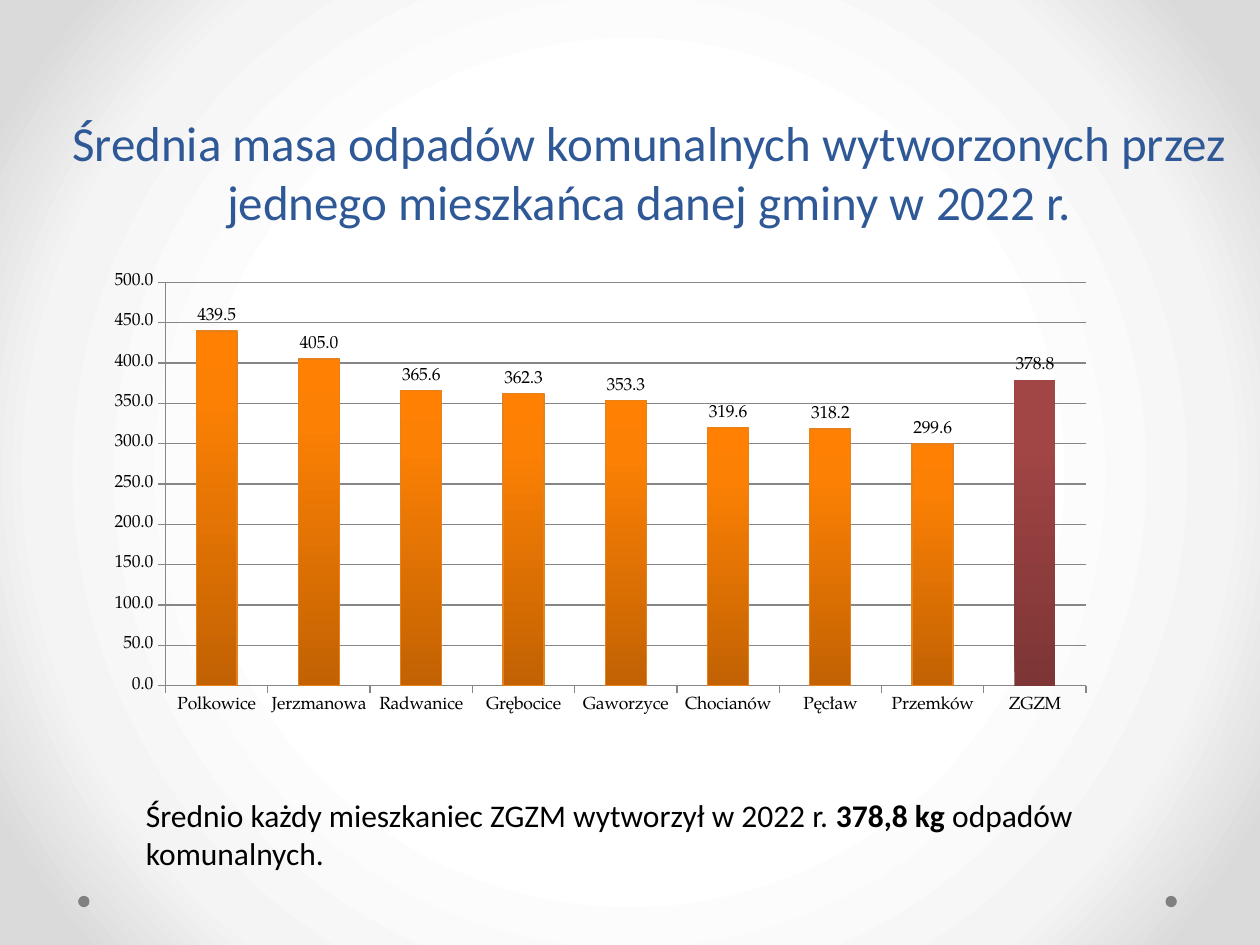
from lxml.etree import SubElement
from pptx import Presentation
from pptx.chart.data import CategoryChartData
from pptx.dml.color import RGBColor
from pptx.enum.chart import XL_CHART_TYPE, XL_LABEL_POSITION, XL_TICK_MARK
from pptx.enum.shapes import MSO_SHAPE
from pptx.enum.text import MSO_ANCHOR, MSO_AUTO_SIZE, PP_ALIGN
from pptx.oxml.ns import qn
from pptx.util import Inches, Pt


def add_text(paragraph, text, size=18, color="000000", bold=False):
    run = paragraph.add_run()
    run.text = text
    run.font.name = "Calibri"
    run.font.size = Pt(size)
    run.font.bold = bold
    run.font.color.rgb = RGBColor.from_string(color)


def set_gradient(fill, stops, circular=False):
    """Fill with (percent, hex) stops, from the centre or from the bottom up."""
    fill.gradient()
    gradient = fill._fill._gradFill
    for child in list(gradient):
        gradient.remove(child)
    stop_list = SubElement(gradient, qn("a:gsLst"))
    for percent, color in stops:
        stop = SubElement(stop_list, qn("a:gs"), pos=str(percent * 1000))
        SubElement(stop, qn("a:srgbClr"), val=color)
    if circular:
        center = SubElement(gradient, qn("a:path"), {"path": "circle"})
        SubElement(center, qn("a:fillToRect"), {side: "50000" for side in "ltrb"})
    else:
        SubElement(gradient, qn("a:lin"), ang="16200000", scaled="0")


presentation = Presentation()
presentation.slide_width = Inches(10)
presentation.slide_height = Inches(7.5)
slide = presentation.slides.add_slide(presentation.slide_layouts[5])

# Background and corner dots
set_gradient(slide.background.fill,
             [(50, "FFFFFF"), (76, "F4F4F4"), (92, "DADADA")], circular=True)
for left in (0.62, 9.25):
    dot = slide.shapes.add_shape(MSO_SHAPE.OVAL, Inches(left), Inches(7.11),
                                 Inches(0.09), Inches(0.09))
    dot.shadow.inherit = False
    dot.fill.solid()
    dot.fill.fore_color.rgb = RGBColor.from_string("808080")
    dot.line.fill.background()

# Title
title = slide.shapes.title
title.left, title.top = Inches(0.42), Inches(0.13)
title.width, title.height = Inches(9.46), Inches(1.75)
title.text_frame.vertical_anchor = MSO_ANCHOR.BOTTOM
title.text_frame.auto_size = MSO_AUTO_SIZE.NONE
paragraph = title.text_frame.paragraphs[0]
paragraph.alignment = PP_ALIGN.CENTER
add_text(paragraph, "Średnia masa odpadów komunalnych wytworzonych przez "
         "jednego mieszkańca danej gminy w 2022 r.", size=28, color="2F5897")

# Caption
caption = slide.shapes.add_textbox(Inches(1.06), Inches(6.27), Inches(7.72), Inches(0.71))
caption.text_frame.word_wrap = True
caption.text_frame.auto_size = MSO_AUTO_SIZE.SHAPE_TO_FIT_TEXT
paragraph = caption.text_frame.paragraphs[0]
add_text(paragraph, "Średnio każdy mieszkaniec ZGZM wytworzył w 2022 r. ")
add_text(paragraph, "378,8 kg ", bold=True)
add_text(paragraph, "odpadów komunalnych.")

# Chart data
waste = {
    "Polkowice": 439.5, "Jerzmanowa": 405.0, "Radwanice": 365.6,
    "Grębocice": 362.3, "Gaworzyce": 353.3, "Chocianów": 319.6,
    "Pęcław": 318.2, "Przemków": 299.6, "ZGZM": 378.8,
}
chart_data = CategoryChartData(number_format="0.0")
chart_data.categories = list(waste)
chart_data.add_series("Series 1", list(waste.values()))
chart = slide.shapes.add_chart(XL_CHART_TYPE.COLUMN_CLUSTERED, Inches(0.75), Inches(2.1),
                               Inches(8.03), Inches(3.65), chart_data).chart
chart.has_legend = False
chart.has_title = False
chart.font.name = "TeX Gyre Pagella"
chart.font.size = Pt(10)
chart.font.color.rgb = RGBColor.from_string("000000")

# Axes
value_axis = chart.value_axis
value_axis.minimum_scale, value_axis.maximum_scale = 0, 500
value_axis.major_unit = 50
value_axis.has_major_gridlines = True
value_axis.tick_labels.number_format = "0.0"
value_axis.tick_labels.number_format_is_linked = False
for axis in (chart.category_axis, value_axis):
    axis.major_tick_mark = XL_TICK_MARK.OUTSIDE
for line in (chart.category_axis.format.line, value_axis.format.line,
             value_axis.major_gridlines.format.line):
    line.color.rgb = RGBColor.from_string("868686")
    line.width = Pt(0.75)

# Columns: the union's average stands out in red
plot = chart.plots[0]
plot.gap_width = 150
plot.vary_by_categories = False
series = plot.series[0]
average = series.points[len(waste) - 1]
set_gradient(series.format.fill, [(0, "C26203"), (80, "FB8004"), (100, "FF8002")])
set_gradient(average.format.fill, [(0, "7D3535"), (80, "A24545"), (100, "A44343")])
series.format.line.color.rgb = RGBColor.from_string("E6811C")
series.format.line.width = Pt(0.75)
average.format.line.fill.background()

# Value labels
labels = series.data_labels
labels.show_value = True
labels.position = XL_LABEL_POSITION.OUTSIDE_END
labels.number_format = "0.0"
labels.number_format_is_linked = False

presentation.save("out.pptx")
